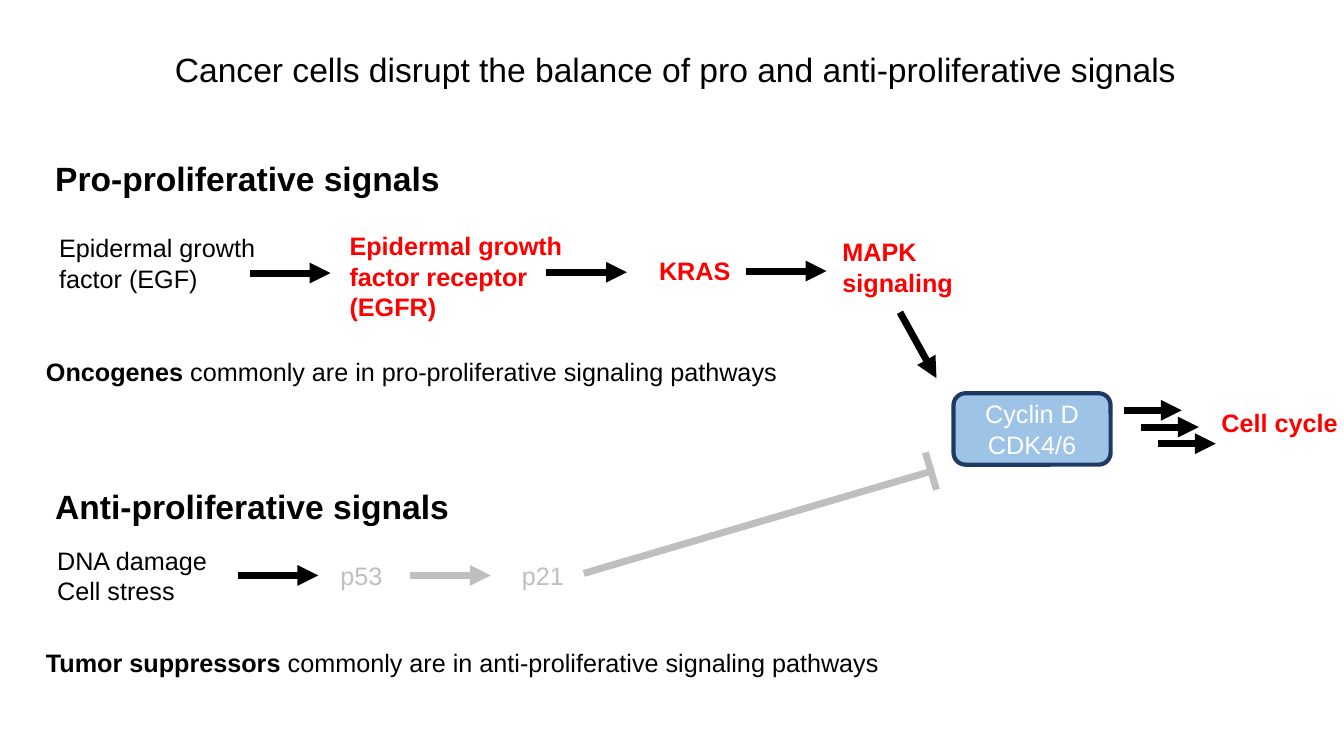
from lxml.etree import SubElement
from pptx import Presentation
from pptx.dml.color import RGBColor
from pptx.enum.shapes import MSO_CONNECTOR, MSO_SHAPE
from pptx.enum.text import MSO_ANCHOR, PP_ALIGN
from pptx.oxml.ns import qn
from pptx.util import Cm, Pt

BLACK, RED, WHITE = "000000", "FF0000", "FFFFFF"
ARROW_LENGTH = 2.03


def color(value):
    return RGBColor.from_string(value)


def format_text(text_frame, size, text_color, bold=False):
    for paragraph in text_frame.paragraphs:
        for run in paragraph.runs:
            run.font.name = "Arial"
            run.font.size = Pt(size)
            run.font.bold = bold
            run.font.color.rgb = color(text_color)


def add_text(slide, left, top, width, height, text, size=18, text_color=BLACK, bold=False):
    shape = slide.shapes.add_textbox(Cm(left), Cm(top), Cm(width), Cm(height))
    shape.text_frame.word_wrap = True
    shape.text_frame.text = text
    format_text(shape.text_frame, size, text_color, bold)
    return shape.text_frame


def add_statement(slide, left, top, width, term, rest):
    text_frame = add_text(slide, left, top, width, 1.02, term, bold=True)
    run = text_frame.paragraphs[0].add_run()
    run.text = rest
    format_text(text_frame, 18, BLACK)
    text_frame.paragraphs[0].runs[0].font.bold = True


def add_line(slide, start_x, start_y, end_x, end_y, arrow=True):
    connector = slide.shapes.add_connector(
        MSO_CONNECTOR.STRAIGHT, Cm(start_x), Cm(start_y), Cm(end_x), Cm(end_y))
    connector.line.color.rgb = color(BLACK)
    connector.line.width = Pt(5)
    if arrow:
        SubElement(connector.line._get_or_add_ln(), qn("a:tailEnd"), type="triangle")
    SubElement(connector._element.spPr, qn("a:effectLst"))


def add_arrow(slide, left, top, length=ARROW_LENGTH):
    add_line(slide, left, top, left + length, top)


def add_veil(slide, left, top, width, height):
    shape = slide.shapes.add_shape(
        MSO_SHAPE.RECTANGLE, Cm(left), Cm(top), Cm(width), Cm(height))
    shape.shadow.inherit = False
    shape.line.fill.background()
    shape.fill.solid()
    shape.fill.fore_color.rgb = color(WHITE)
    fill_color = shape._element.spPr.find(qn("a:solidFill")).find(qn("a:srgbClr"))
    SubElement(fill_color, qn("a:alpha"), val="75000")


def add_title(slide, left, top, width, height):
    text_frame = add_text(
        slide, left, top, width, height,
        "Cancer cells disrupt the balance of pro and anti-proliferative signals", 24)
    text_frame.vertical_anchor = MSO_ANCHOR.MIDDLE
    text_frame.paragraphs[0].alignment = PP_ALIGN.CENTER
    text_frame.paragraphs[0].line_spacing = 0.9


def add_pro_signals(slide, left, top):
    add_text(slide, left + 0.23, top, 10.67, 1.27, "Pro-proliferative signals", 24, bold=True)
    add_text(slide, left + 0.33, top + 1.88, 6.02, 1.8, "Epidermal growth factor (EGF)")
    oncogenes = [
        (7.65, 1.83, 6.53, 2.57, "Epidermal growth factor receptor (EGFR)"),
        (15.45, 2.46, 2.44, 1.02, "KRAS"),
        (20.07, 1.98, 4.27, 1.8, "MAPK signaling"),
    ]
    for x, y, width, height, name in oncogenes:
        add_text(slide, left + x, top + y, width, height, name, text_color=RED, bold=True)
    for x, y in [(5.39, 3.02), (12.86, 3), (17.89, 2.97)]:
        add_arrow(slide, left + x, top + y)
    add_line(slide, left + 21.77, top + 4.01, left + 22.69, top + 5.67)
    add_statement(slide, left, top + 5, 19.1, "Oncogenes ",
                  "commonly are in pro-proliferative signaling pathways")


def add_anti_signals(slide, left, top):
    add_text(slide, left + 0.23, top, 10.54, 1.27, "Anti-proliferative signals", 24, bold=True)
    for x, name in [(7.42, "p53"), (11.99, "p21")]:
        add_text(slide, left + x, top + 1.88, 2.03, 1.02, name)
    for x in (5.08, 9.43):
        add_arrow(slide, left + x, top + 2.38)
    add_line(slide, left + 22.69, top + 0.22, left + 22.41, top - 0.72, arrow=False)
    add_line(slide, left + 13.8, top + 2.33, left + 22.51, top - 0.23, arrow=False)
    add_veil(slide, left + 7.42, top + 1.32, 6.22, 1.8)
    add_veil(slide, left + 13.49, top - 1.3, 9.3, 4.27)
    add_text(slide, left + 0.28, top + 1.49, 4.55, 1.8, "DNA damage\nCell stress")
    add_statement(slide, left, top + 4.06, 21.69, "Tumor suppressors",
                  " commonly are in anti-proliferative signaling pathways")


def add_cell_cycle(slide, left, top):
    shape = slide.shapes.add_shape(
        MSO_SHAPE.ROUNDED_RECTANGLE, Cm(left), Cm(top), Cm(3.96), Cm(1.8))
    shape.shadow.inherit = False
    shape.fill.solid()
    shape.fill.fore_color.rgb = color("9DC3E6")
    shape.line.color.rgb = color("203864")
    shape.line.width = Pt(3)
    shape.text_frame.word_wrap = True
    shape.text_frame.text = "Cyclin D CDK4/6"
    shape.text_frame.vertical_anchor = MSO_ANCHOR.MIDDLE
    shape.text_frame.paragraphs[0].alignment = PP_ALIGN.CENTER
    format_text(shape.text_frame, 18, WHITE)
    for step in range(3):
        add_arrow(slide, left + 4.29 + 0.43 * step, top + 0.43 + 0.42 * step, 1.46)
    add_text(slide, left + 6.5, top + 0.22, 3.45, 1.02, "Cell cycle", text_color=RED, bold=True)


def main():
    presentation = Presentation()
    presentation.slide_width = Cm(33.87)
    presentation.slide_height = Cm(19.05)
    slide = presentation.slides.add_slide(presentation.slide_layouts[6])
    add_title(slide, 0.66, 1.02, 32.72, 1.57)
    add_pro_signals(slide, 0.91, 3.86)
    add_anti_signals(slide, 0.91, 12.12)
    add_cell_cycle(slide, 24.03, 9.91)
    presentation.save("out.pptx")


if __name__ == "__main__":
    main()
